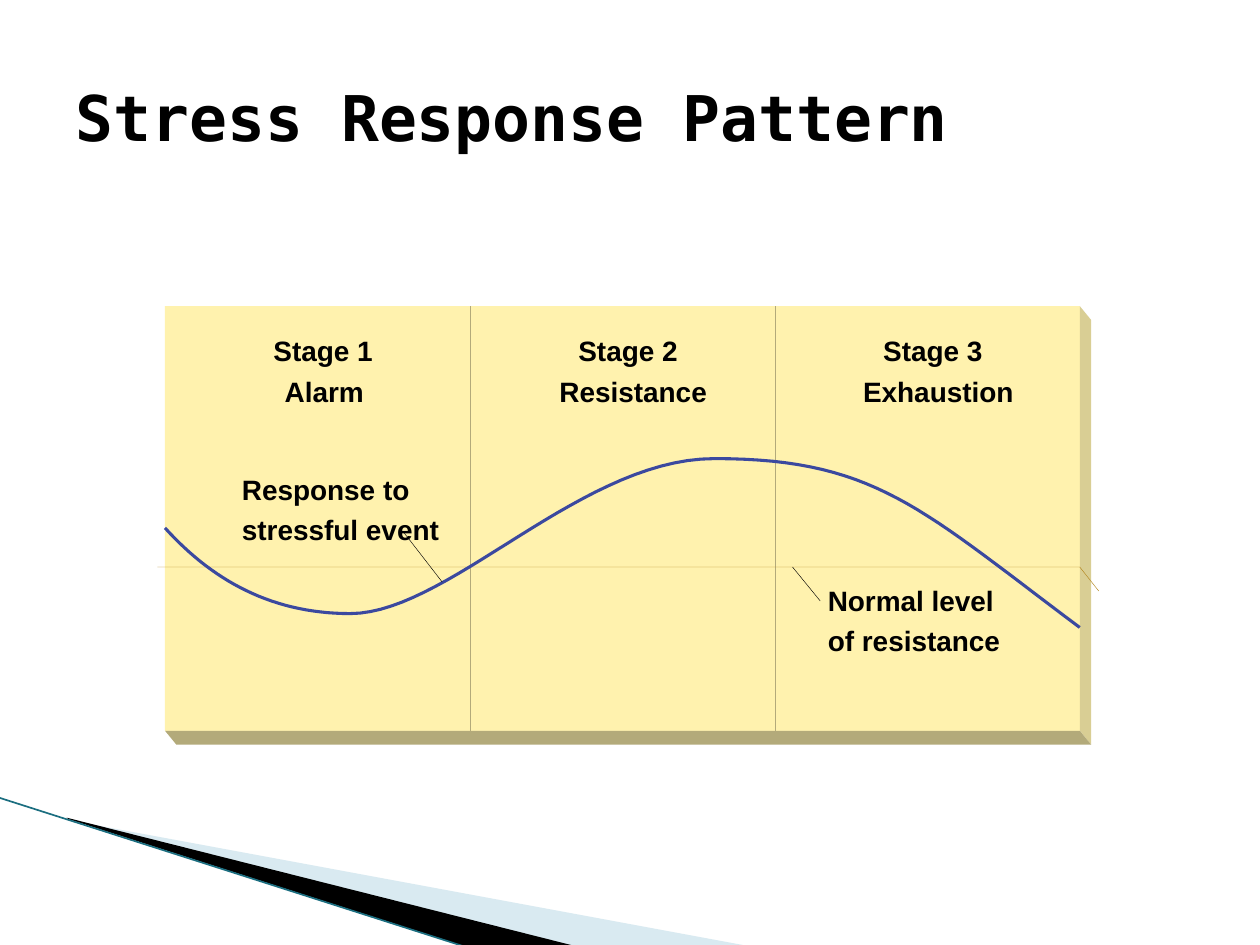
from lxml.etree import SubElement
from pptx import Presentation
from pptx.dml.color import RGBColor
from pptx.enum.shapes import MSO_CONNECTOR, MSO_SHAPE
from pptx.enum.text import MSO_ANCHOR, MSO_AUTO_SIZE, PP_ALIGN
from pptx.oxml.ns import qn
from pptx.util import Inches, Pt

BLACK = RGBColor(0x00, 0x00, 0x00)
PALE_BLUE = RGBColor(0xA0, 0xCB, 0xDC)
EDGE_TEAL = RGBColor(0x1B, 0x6E, 0x80)
CREAM = RGBColor(0xFF, 0xF2, 0xAE)
SIDE = RGBColor(0xD9, 0xCE, 0x94)
BASE = RGBColor(0xB3, 0xAA, 0x7A)
OCHRE = RGBColor(0xB3, 0x86, 0x1F)
CURVE_BLUE = RGBColor(0x3B, 0x49, 0x9F)

LEFT, RIGHT, TOP, BOTTOM = 1.31, 8.57, 2.43, 5.8
DEPTH_X, DEPTH_Y = 0.09, 0.11
NORMAL_LEVEL = 4.5
CURVE_START = (1.31, 4.19)
CURVE_SEGMENTS = [
    [(1.69, 4.61), (2.16, 4.87), (2.78, 4.87)],
    [(3.56, 4.87), (4.61, 3.64), (5.67, 3.64)],
    [(6.94, 3.64), (7.3, 4.03), (8.57, 4.98)],
]


def set_style(shape, fill=None, line=None, width=0.25):
    shape.shadow.inherit = False
    if fill is None:
        shape.fill.background()
    else:
        shape.fill.solid()
        shape.fill.fore_color.rgb = fill
    if line is None:
        shape.line.fill.background()
    else:
        shape.line.color.rgb = line
        shape.line.width = Pt(width)


def add_path(s, points, closed=True, **style):
    points = [(Inches(x), Inches(y)) for x, y in points]
    builder = s.shapes.build_freeform(*points[0], scale=1.0)
    builder.add_line_segments(points[1:], close=closed)
    shape = builder.convert_to_shape()
    set_style(shape, **style)
    return shape


def add_line(s, start, end, color, width=0.25):
    line = s.shapes.add_connector(
        MSO_CONNECTOR.STRAIGHT, *map(Inches, start + end))
    line.line.color.rgb = color
    line.line.width = Pt(width)
    SubElement(line._element.spPr, qn("a:effectLst"))


def add_label(s, text, left, top, width):
    tb = s.shapes.add_textbox(
        Inches(left), Inches(top), Inches(width), Inches(0.27))
    tf = tb.text_frame
    tf.margin_left = tf.margin_right = tf.margin_top = tf.margin_bottom = 0
    tf.word_wrap = False
    tf.auto_size = MSO_AUTO_SIZE.SHAPE_TO_FIT_TEXT
    add_run(tf.paragraphs[0], text, "Arial", 16)


def add_run(p, text, font, size):
    r = p.add_run()
    r.text = text
    r.font.name = font
    r.font.size = Pt(size)
    r.font.bold = True
    r.font.color.rgb = BLACK


def set_title(s, text):
    title = s.shapes.title
    title.left, title.top = Inches(0.5), Inches(0.3)
    title.width, title.height = Inches(9), Inches(1.25)
    tf = title.text_frame
    tf.vertical_anchor = MSO_ANCHOR.MIDDLE
    p = tf.paragraphs[0]
    p.alignment = PP_ALIGN.LEFT
    add_run(p, text, "DejaVu Sans Mono", 36)


def add_corner_swoosh(s):
    pale = add_path(s, [(0.55, 6.51), (5.95, 7.51), (4.56, 7.51), (0.55, 6.5)],
                    fill=PALE_BLUE)
    color = pale._element.spPr.find(qn("a:solidFill"))[0]
    SubElement(color, qn("a:alpha"), val="40000")
    add_path(s, [(0.53, 6.49), (4.57, 7.51), (3.72, 7.52), (0.54, 6.5)],
             fill=BLACK)
    add_line(s, (-0.01, 6.33), (3.71, 7.52), EDGE_TEAL, 0.95)


def add_panel(s):
    panel = s.shapes.add_shape(
        MSO_SHAPE.RECTANGLE, Inches(LEFT), Inches(TOP),
        Inches(RIGHT - LEFT), Inches(BOTTOM - TOP))
    set_style(panel, fill=CREAM, line=CREAM)
    stage_width = (RIGHT - LEFT) / 3
    for i in (1, 2):
        x = LEFT + i * stage_width
        add_line(s, (x, TOP), (x, BOTTOM), BASE)
    right, bottom = RIGHT + DEPTH_X, BOTTOM + DEPTH_Y
    add_path(s, [(right, bottom), (right, TOP + DEPTH_Y),
                 (RIGHT, TOP), (RIGHT, BOTTOM)], fill=SIDE)
    add_path(s, [(right, bottom), (RIGHT, BOTTOM),
                 (LEFT, BOTTOM), (LEFT + DEPTH_X, bottom)], fill=BASE)
    add_path(s, [(1.25, NORMAL_LEVEL), (RIGHT, NORMAL_LEVEL), (8.72, 4.69)],
             closed=False, line=OCHRE)


def bezier_point(controls, t):
    weights = ((1 - t) ** 3, 3 * t * (1 - t) ** 2, 3 * t * t * (1 - t), t ** 3)
    return tuple(sum(w * c for w, c in zip(weights, axis))
                 for axis in zip(*controls))


def add_response_curve(s, steps=30):
    points = [CURVE_START]
    for segment in CURVE_SEGMENTS:
        controls = [points[-1]] + segment
        points += [bezier_point(controls, i / steps)
                   for i in range(1, steps + 1)]
    add_path(s, points, closed=False, line=CURVE_BLUE, width=1.75)


def add_labels(s):
    stages = [("Alarm", 2.26, 0.65), ("Resistance", 4.44, 1.21),
              ("Exhaustion", 6.85, 1.22)]
    for i, (name, left, width) in enumerate(stages):
        add_label(s, f"Stage {i + 1}", 2.17 + 2.42 * i, 2.65, 0.81)
        add_label(s, name, left, 2.97, width)
    add_label(s, "Normal level", 6.57, 4.63, 1.34)
    add_label(s, "of resistance", 6.57, 4.95, 1.39)
    add_label(s, "Response to", 1.92, 3.75, 1.35)
    add_label(s, "stressful event", 1.92, 4.07, 1.59)


def main():
    prs = Presentation()
    prs.slide_width, prs.slide_height = Inches(10), Inches(7.5)
    s = prs.slides.add_slide(prs.slide_layouts[5])
    add_corner_swoosh(s)
    set_title(s, "Stress Response Pattern")
    add_panel(s)
    add_labels(s)
    add_response_curve(s)
    add_line(s, (6.51, 4.77), (6.29, NORMAL_LEVEL), BLACK)
    add_line(s, (3.51, 4.62), (3.2, 4.22), BLACK)
    prs.save("out.pptx")


if __name__ == "__main__":
    main()
